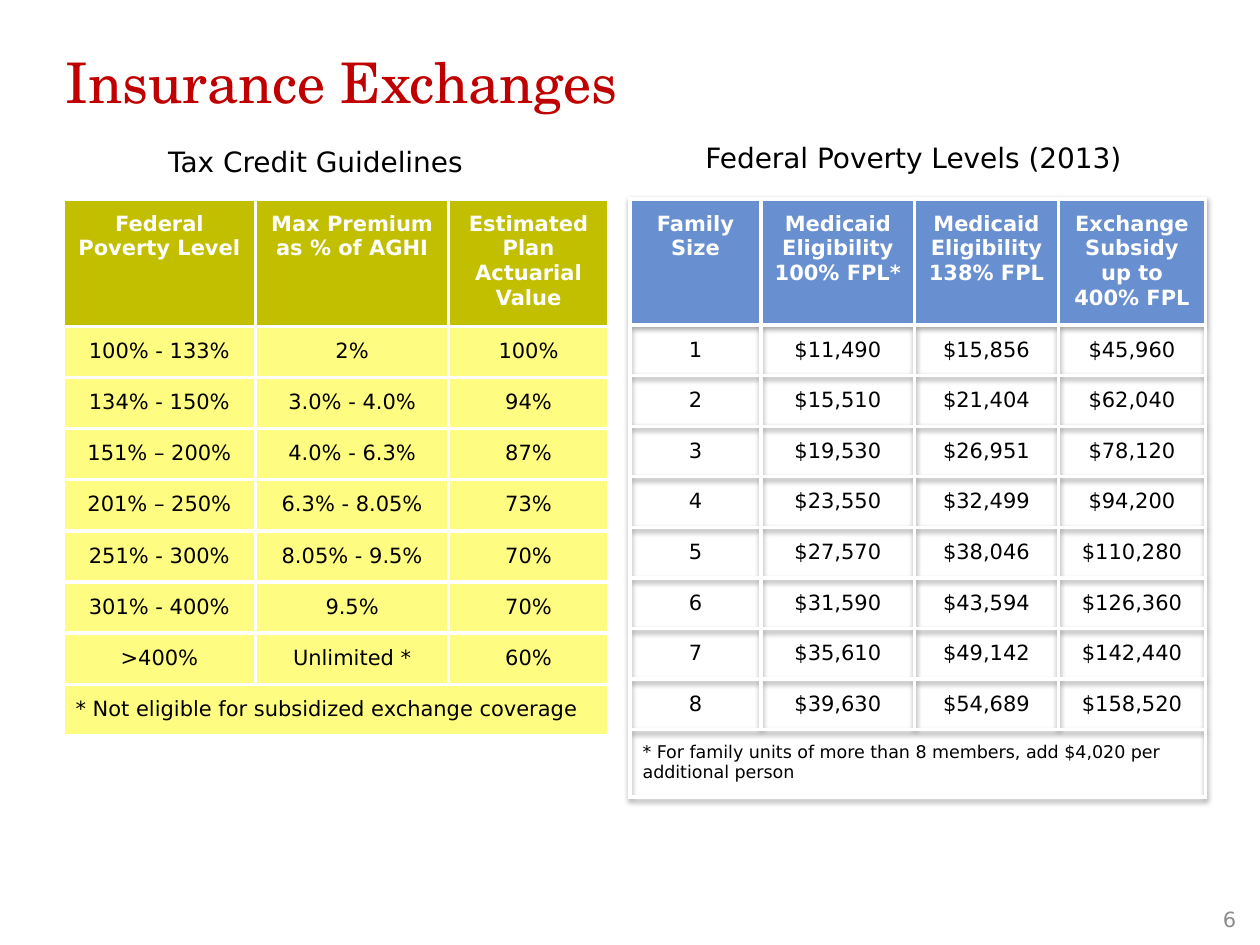
"""Build the insurance exchanges slide with its two tables."""
from lxml import etree
from pptx import Presentation
from pptx.dml.color import RGBColor
from pptx.enum import text as t
from pptx.oxml import ns
from pptx.util import Inches, Pt

HUE = {"red": "C00000", "black": "000000", "white": "FFFFFF", "gray": "8C8C8C",
       "olive": "C2BF00", "lemon": "FFFD81", "blue": "688FCF"}
SANS = "DejaVu Sans"
LEFT, MID, RIGHT = t.PP_ALIGN.LEFT, t.PP_ALIGN.CENTER, t.PP_ALIGN.RIGHT
BARE = "{2D5ABB26-0587-4C30-8999-92F81FD0307C}"
EDGE = ('<a:{} xmlns:a="{}" w="28575"><a:solidFill><a:srgbClr val="{}"/>'
        '</a:solidFill></a:{}>')
SHADE = ('<a:effectLst xmlns:a="{}"><a:outerShdw blurRad="40000" dist="20000" '
         'dir="5400000" rotWithShape="0"><a:srgbClr val="000000">'
         '<a:alpha val="38000"/></a:srgbClr></a:outerShdw></a:effectLst>')
URI = ns.nsuri("a:tblPr".split(":")[0])


def style(frame, words, size, hue, align, face=SANS, bold=False):
    frame.text = words
    for para in frame.paragraphs:
        para.alignment = align
        font = para.font
        font.size, font.name, font.bold = Pt(size), face, bold
        font.color.rgb = RGBColor.from_string(HUE[hue])


def grid(left, high, cols, head, foot, rows, note, size, top, body):
    count = len(rows) + 1
    table = slide.shapes.add_table(count, len(cols), Inches(left), Inches(1.58),
                                   Inches(sum(cols)), Inches(high)).table
    table.first_row = table.horz_banding = False
    table._tbl.tblPr.find(ns.qn("a:tableStyleId")).text = BARE
    step = (high - head - (foot or 0)) / (count - (2 if foot else 1))
    tall = [head] + [step] * (count - 1)
    if foot:
        tall[-1] = foot
    for col, wide in zip(table.columns, cols):
        col.width = Inches(wide)
    for row, deep in zip(table.rows, tall):
        row.height = Inches(deep)
    for i, row in enumerate(rows + [[note] + [""] * (len(cols) - 1)]):
        last = i == count - 1
        for j, words in enumerate(row):
            cell = table.cell(i, j)
            cell.margin_left = cell.margin_right = Inches(0.1)
            cell.margin_top = cell.margin_bottom = Inches(0.1)
            style(cell.text_frame, words, size if last else 12,
                  "black" if i else "white", LEFT if last else MID, bold=i == 0)
            hue = body if i else top
            if hue:
                cell.fill.solid()
                cell.fill.fore_color.rgb = RGBColor.from_string(HUE[hue])
            else:
                cell.fill.background()
            for k, side in enumerate(("lnL", "lnR", "lnT", "lnB")):
                line = EDGE.format(side, URI, HUE["white"], side)
                cell._tc.tcPr.insert(k, etree.fromstring(line))
    table.cell(count - 1, 0).merge(table.cell(count - 1, len(cols) - 1))
    return table


deck = Presentation()
deck.slide_width, deck.slide_height = Inches(10), Inches(7.5)
slide = deck.slides.add_slide(deck.slide_layouts[6])

credits = [
    ["Federal Poverty Level", "Max Premium as % of AGHI", "Estimated Plan Actuarial Value"],
    ["100% - 133%", "2%", "100%"],
    ["134% - 150%", "3.0% - 4.0%", "94%"],
    ["151% – 200%", "4.0% - 6.3%", "87%"],
    ["201% – 250%", "6.3% - 8.05%", "73%"],
    ["251% - 300%", "8.05% - 9.5%", "70%"],
    ["301% - 400%", "9.5%", "70%"],
    [">400%", "Unlimited *", "60%"],
]
levels = [
    ["Family Size", "Medicaid Eligibility\n100% FPL*", "Medicaid Eligibility\n138% FPL",
     "Exchange Subsidy up to 400% FPL"],
    ["1", "$11,490", "$15,856", "$45,960"],
    ["2", "$15,510", "$21,404", "$62,040"],
    ["3", "$19,530", "$26,951", "$78,120"],
    ["4", "$23,550", "$32,499", "$94,200"],
    ["5", "$27,570", "$38,046", "$110,280"],
    ["6", "$31,590", "$43,594", "$126,360"],
    ["7", "$35,610", "$49,142", "$142,440"],
    ["8", "$39,630", "$54,689", "$158,520"],
]
grid(0.5, 4.26, [1.53, 1.53, 1.27], 1.01, None, credits,
     "* Not eligible for subsidized exchange coverage", 12, "olive", "lemon")

labels = [
    ("Tax Credit Guidelines", 0.5, 1.1, 4.01, 0.37, 16, "black", MID, SANS),
    ("Federal Poverty Levels (2013)", 5.5, 1.07, 3.75, 0.37, 16, "black", LEFT, SANS),
    ("Insurance Exchanges", 0.42, 0.33, 7.67, 0.64, 32, "red", LEFT, "TeX Gyre Schola"),
    ("6", 7.58, 7.17, 2.33, 0.25, 12, "gray", RIGHT, SANS),
]
for words, left, top, wide, high, size, hue, align, face in labels:
    box = slide.shapes.add_textbox(Inches(left), Inches(top), Inches(wide), Inches(high))
    frame = box.text_frame
    frame.word_wrap = True
    style(frame, words, size, hue, align, face)
    if align == RIGHT:
        frame.vertical_anchor = t.MSO_ANCHOR.MIDDLE
    else:
        frame.auto_size = t.MSO_AUTO_SIZE.SHAPE_TO_FIT_TEXT

poor = grid(5, 4.73, [1.04, 1.22, 1.14, 1.17], 0.99, 0.53, levels,
            "* For family units of more than 8 members, add $4,020 per additional person",
            10, "blue", None)
poor._tbl.tblPr.insert(0, etree.fromstring(SHADE.format(URI)))

deck.save("out.pptx")
